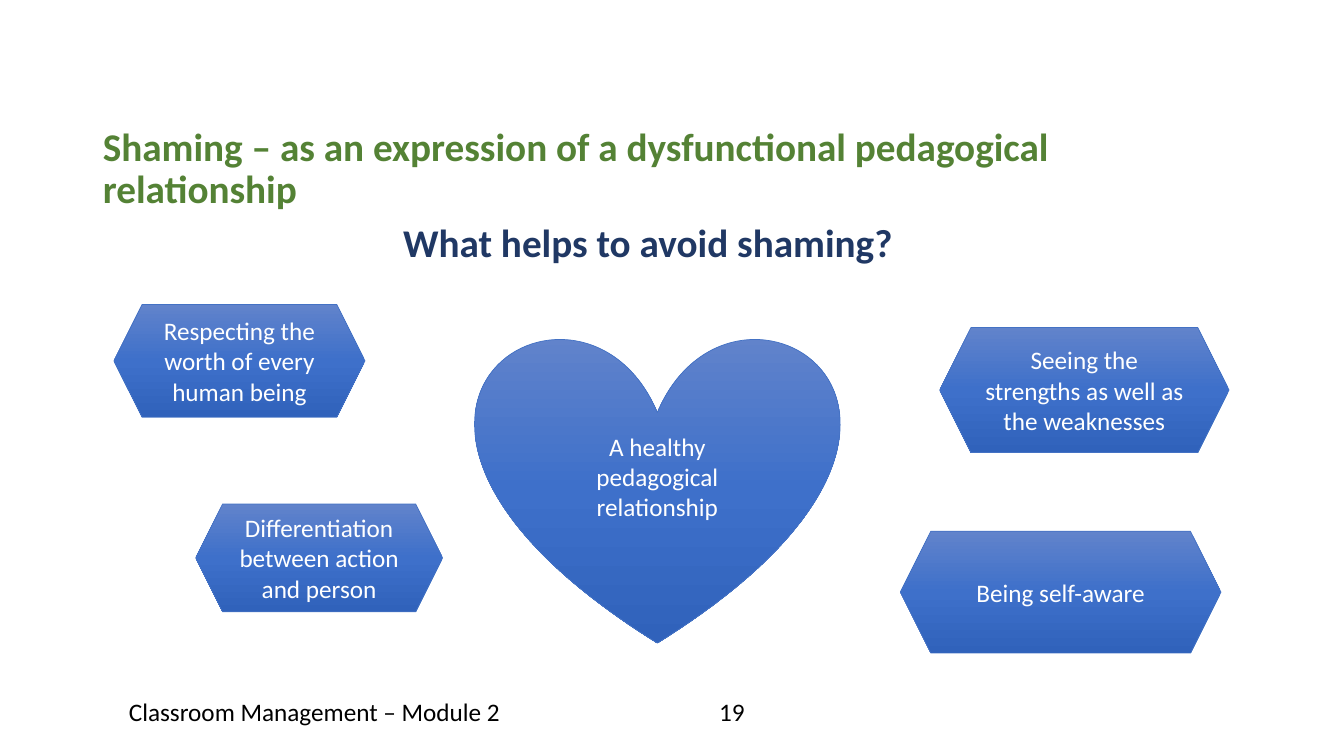
from copy import deepcopy

from pptx import Presentation
from pptx.dml.color import RGBColor
from pptx.enum.shapes import MSO_SHAPE as Shape
from pptx.enum.text import MSO_ANCHOR as Anchor, MSO_AUTO_SIZE as AutoSize, PP_ALIGN as Align
from pptx.oxml.ns import qn
from pptx.util import Inches, Pt

COLORS = {
    "title": "548235", "question": "203864", "footer": "000000",
    "label": "FFFFFF", "outline": "4472C4",
    "top": "6183CB", "middle": "3E70CA", "bottom": "3062BB",
}
GRADIENT = [(0, "top"), (0.5, "middle"), (1, "bottom")]


def write(box, text, size, color, bold=False, align=Align.LEFT, anchor=Anchor.TOP, spacing=1.0):
    frame = box.text_frame
    frame.text = text
    frame.word_wrap = True
    frame.auto_size = AutoSize.NONE
    frame.vertical_anchor = anchor
    para = frame.paragraphs[0]
    para.alignment = align
    para.line_spacing = spacing
    para.space_before = Pt(0)
    font = para.runs[0].font
    font.name, font.size, font.bold = "Calibri", Pt(size), bold
    font.color.rgb = RGBColor.from_string(COLORS[color])


def fill_gradient(shape):
    shape.fill.gradient()
    shape.fill.gradient_angle = 270
    # The default gradient has two stops; add the third
    stop_list = shape._element.spPr.find(qn("a:gradFill")).find(qn("a:gsLst"))
    stop_list.insert(1, deepcopy(stop_list[0]))
    for stop, (position, color) in zip(shape.fill.gradient_stops, GRADIENT):
        stop.position = position
        stop.color.rgb = RGBColor.from_string(COLORS[color])


deck = Presentation()
deck.slide_width, deck.slide_height = Inches(13.33), Inches(7.5)
page = deck.slides.add_slide(deck.slide_layouts[5])

# Title
title = page.shapes.title
title.left, title.top = Inches(0.92), Inches(1.2)
title.width, title.height = Inches(11.5), Inches(0.97)
write(title, "Shaming – as an expression of a dysfunctional pedagogical relationship",
      28, "title", bold=True, anchor=Anchor.MIDDLE, spacing=0.9)

# Footer and page number
for left, width, text, align in [
    (1.18, 4.5, "Classroom Management – Module 2", Align.LEFT),
    (5.76, 3, "19", Align.CENTER),
]:
    footer = page.shapes.add_textbox(Inches(left), Inches(6.86), Inches(width), Inches(0.4))
    write(footer, text, 18, "footer", align=align)

# Question
question = page.shapes.add_textbox(Inches(3.9), Inches(2.17), Inches(5.49), Inches(1.25))
write(question, "What helps to avoid shaming?", 28, "question", bold=True, spacing=0.9)

# Heart and the hexagons around it
for kind, left, top, width, height, text in [
    (Shape.HEART, 4.72, 3.33, 3.6, 3.05, "A healthy pedagogical relationship"),
    (Shape.HEXAGON, 1.13, 3.02, 2.49, 1.12, "Respecting the worth of every human being"),
    (Shape.HEXAGON, 1.94, 5, 2.45, 1.07, "Differentiation between action and person"),
    (Shape.HEXAGON, 9.32, 3.25, 2.87, 1.24, "Seeing the strengths as well as the weaknesses"),
    (Shape.HEXAGON, 8.93, 5.27, 3.18, 1.21, "Being self-aware"),
]:
    shape = page.shapes.add_shape(kind, Inches(left), Inches(top), Inches(width), Inches(height))
    shape.shadow.inherit = False
    fill_gradient(shape)
    shape.line.color.rgb = RGBColor.from_string(COLORS["outline"])
    shape.line.width = Pt(0.5)
    write(shape, text, 18, "label", align=Align.CENTER, anchor=Anchor.MIDDLE)

deck.save("out.pptx")
